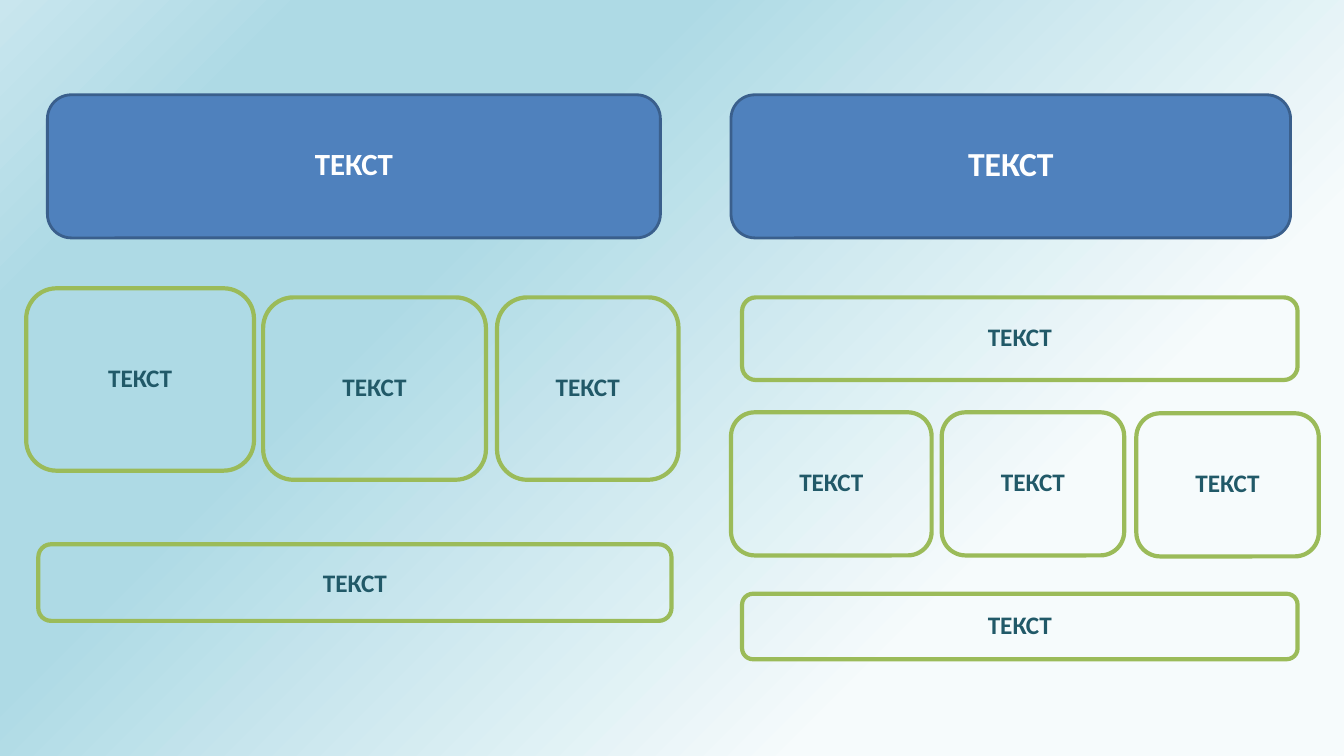
from copy import deepcopy

from pptx import Presentation
from pptx.dml.color import RGBColor
from pptx.enum import shapes, text
from pptx.util import Inches, Pt

WHITE = RGBColor(0xFF, 0xFF, 0xFF)
BLUE = RGBColor(0x4F, 0x81, 0xBD)
NAVY = RGBColor(0x3A, 0x5F, 0x8C)
GREEN = RGBColor(0x9B, 0xBB, 0x59)
TEAL = RGBColor(0x21, 0x59, 0x68)
SKY = RGBColor(0xAE, 0xDA, 0xE5)
PALE_SKY = RGBColor(0xC9, 0xE6, 0xEE)
ICE = RGBColor(0xF6, 0xFB, 0xFC)

prs = Presentation()
prs.slide_width, prs.slide_height = Inches(13.33), Inches(7.5)
s = prs.slides.add_slide(prs.slide_layouts[6])

# Diagonal background gradient
fill = s.background.fill
fill.gradient()
fill.gradient_angle = 135
stops = s._element.xpath(".//a:gsLst")[0]
for gs in list(stops):
    stops.append(deepcopy(gs))
gradient = [(0.26, ICE), (0.67, SKY), (0.85, SKY), (1, PALE_SKY)]
for stop, (position, color) in zip(fill.gradient_stops, gradient):
    stop.position = position
    stop.color.rgb = color


def add_box(left, top, width, height, size, color, line, line_width, spacing):
    sp = s.shapes.add_shape(shapes.MSO_SHAPE.ROUNDED_RECTANGLE, Inches(left),
                            Inches(top), Inches(width), Inches(height))
    sp.shadow.inherit = False
    sp.fill.background()
    sp.line.color.rgb = line
    sp.line.width = Pt(line_width)
    tf = sp.text_frame
    tf.word_wrap = True
    tf.vertical_anchor = text.MSO_ANCHOR.MIDDLE
    p = tf.paragraphs[0]
    p.alignment = text.PP_ALIGN.CENTER
    p.line_spacing = spacing
    r = p.add_run()
    r.text = "ТЕКСТ"
    font = {"name": "Calibri", "size": Pt(size), "bold": True}
    for key, value in font.items():
        setattr(r.font, key, value)
    r.font.color.rgb = color
    return sp


# Blue headings of the two columns
for left, width, size in [(0.47, 6.08, 22), (7.25, 5.55, 24)]:
    sp = add_box(left, 0.94, width, 1.42, size, WHITE, NAVY, 2, 0.8)
    sp.fill.solid()
    sp.fill.fore_color.rgb = BLUE

# Green outlined boxes: left, top, width, height, line spacing
boxes = [
    # Left column
    (0.26, 2.86, 2.26, 1.81, 0.85),
    (2.61, 2.95, 2.21, 1.81, 0.85),
    (0.38, 5.4, 6.28, 0.76, 1.0),
    (4.93, 2.95, 1.8, 1.81, 0.85),
    # Right column
    (7.36, 2.95, 5.51, 0.82, 0.85),
    (7.25, 4.09, 1.99, 1.42, 0.85),
    (9.34, 4.09, 1.81, 1.42, 0.85),
    (11.27, 4.1, 1.81, 1.42, 0.85),
    (7.36, 5.89, 5.51, 0.65, 0.85),
]
for left, top, width, height, spacing in boxes:
    sp = add_box(left, top, width, height, 18, TEAL, GREEN, 3, spacing)
    for side in ("left", "top", "right", "bottom"):
        setattr(sp.text_frame, f"margin_{side}", Inches(0.02))

prs.save("out.pptx")
